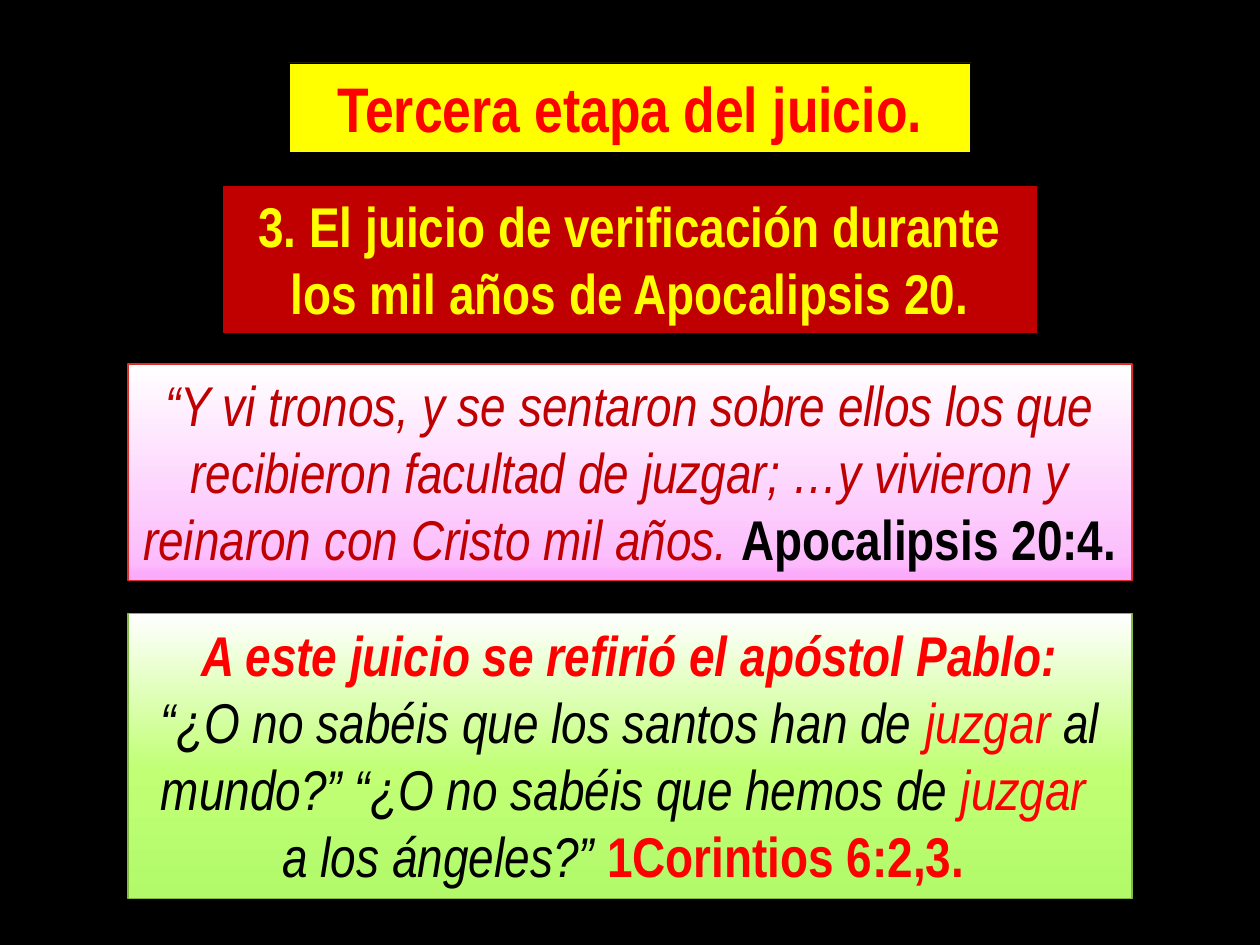
from copy import deepcopy

from lxml import etree
from pptx import Presentation
from pptx.dml.color import RGBColor
from pptx.enum.shapes import MSO_SHAPE
from pptx.enum.text import MSO_ANCHOR, MSO_AUTO_SIZE, PP_ALIGN
from pptx.oxml.ns import qn
from pptx.util import Pt

RECT = MSO_SHAPE.RECTANGLE
TOP = MSO_ANCHOR.TOP
GROW = MSO_AUTO_SIZE.SHAPE_TO_FIT_TEXT
CENTER = PP_ALIGN.CENTER

WIDTH, HEIGHT = 720, 540
FONT = "Arial Narrow"
COLORS = {
    "black": "000000", "red": "FF0000", "dark_red": "C00000", "yellow": "FFFF00",
    "white": "FFFFFF", "pink": "FCBCFC", "deep_pink": "FBABFB",
    "lime": "C1FF75", "green": "B2FA6A",
    "red_line": "DF2E28", "green_line": "81BB42",
}


def rgb(name):
    return RGBColor.from_string(COLORS[name])


def add_text(p, text, color, size=32, bold=False, italic=False, outline=0.75):
    """Add a run whose letters are outlined in their own colour."""
    r = p.add_run()
    r.text = text
    font = r.font
    font.name, font.size, font.bold, font.italic = FONT, Pt(size), bold, italic
    font.color.rgb = rgb(color)
    ln = etree.Element(qn("a:ln"), w=str(Pt(outline)))
    fill = etree.SubElement(ln, qn("a:solidFill"))
    etree.SubElement(fill, qn("a:srgbClr"), val=COLORS[color])
    r._r.get_or_add_rPr().insert(0, ln)


class Slide:
    def __init__(self, prs, background):
        self.slide = prs.slides.add_slide(prs.slide_layouts[6])
        fill = self.slide.background.fill
        fill.solid()
        fill.fore_color.rgb = rgb(background)

    def box(self, top, width, height, paragraphs, line, line_width):
        """Add a horizontally centred box; each paragraph is a list of (text, format)."""
        s = self.slide.shapes.add_shape(
            RECT, Pt((WIDTH - width) / 2), Pt(top), Pt(width), Pt(height))
        s.shadow.inherit = False
        s.line.color.rgb = rgb(line)
        s.line.width = Pt(line_width)
        tf = s.text_frame
        tf.word_wrap, tf.auto_size, tf.vertical_anchor = True, GROW, TOP
        for i, runs in enumerate(paragraphs):
            p = tf.add_paragraph() if i else tf.paragraphs[0]
            p.alignment = CENTER
            for text, style in runs:
                add_text(p, text, **style)
        return s

    def heading(self, top, width, height, text, fill, **style):
        s = self.box(top, width, height, [[(text, dict(style, bold=True))]], "black", 0.5)
        s.fill.solid()
        s.fill.fore_color.rgb = rgb(fill)

    def quote(self, top, height, paragraphs, line, stops):
        """Add a quotation on a top-to-bottom gradient of (position, colour) stops."""
        s = self.box(top, 573.8, height, paragraphs, line, 0.75)
        s.fill.gradient()
        s.fill.gradient_angle = 270
        gs_list = s._element.spPr.find(qn("a:gradFill")).find(qn("a:gsLst"))
        while len(gs_list) < len(stops):
            gs_list.append(deepcopy(gs_list[-1]))
        for stop, (position, color) in zip(s.fill.gradient_stops, stops):
            stop.position = position
            stop.color.rgb = rgb(color)


def main():
    prs = Presentation()
    prs.slide_width, prs.slide_height = Pt(WIDTH), Pt(HEIGHT)
    slide = Slide(prs, "black")

    verse = dict(italic=True, outline=1.5)
    dark_verse = dict(verse, color="dark_red")
    black_verse = dict(verse, color="black")
    red_verse = dict(verse, color="red")

    slide.quote(208, 123.8, [[
        ("“Y vi tronos, y se sentaron sobre ellos los que recibieron facultad de "
         "juzgar; …y vivieron y reinaron con Cristo mil años. ", dark_verse),
        ("Apocalipsis 20:4.", dict(color="black", bold=True)),
    ]], "red_line", [(0, "white"), (0.92, "pink"), (0.97, "deep_pink")])

    slide.quote(350.8, 162.6, [
        [("A este juicio se refirió el apóstol Pablo:", dict(red_verse, bold=True))],
        [("“¿O no sabéis que los santos han de ", black_verse),
         ("juzgar", red_verse),
         (" al mundo?” “¿O no sabéis que hemos de ", black_verse),
         ("juzgar ", red_verse)],
        [("a los ángeles?” ", black_verse),
         ("1Corintios 6:2,3. ", dict(color="red", bold=True))],
    ], "green_line", [(0, "white"), (0.55, "lime"), (1, "green")])

    slide.heading(36, 389.6, 50.9, "Tercera etapa del juicio.",
                  "yellow", color="red", size=36)
    slide.heading(105.8, 465.6, 84.8,
                  "3. El juicio de verificación durante los mil años de Apocalipsis 20.",
                  "dark_red", color="yellow")

    prs.save("out.pptx")


if __name__ == "__main__":
    main()
